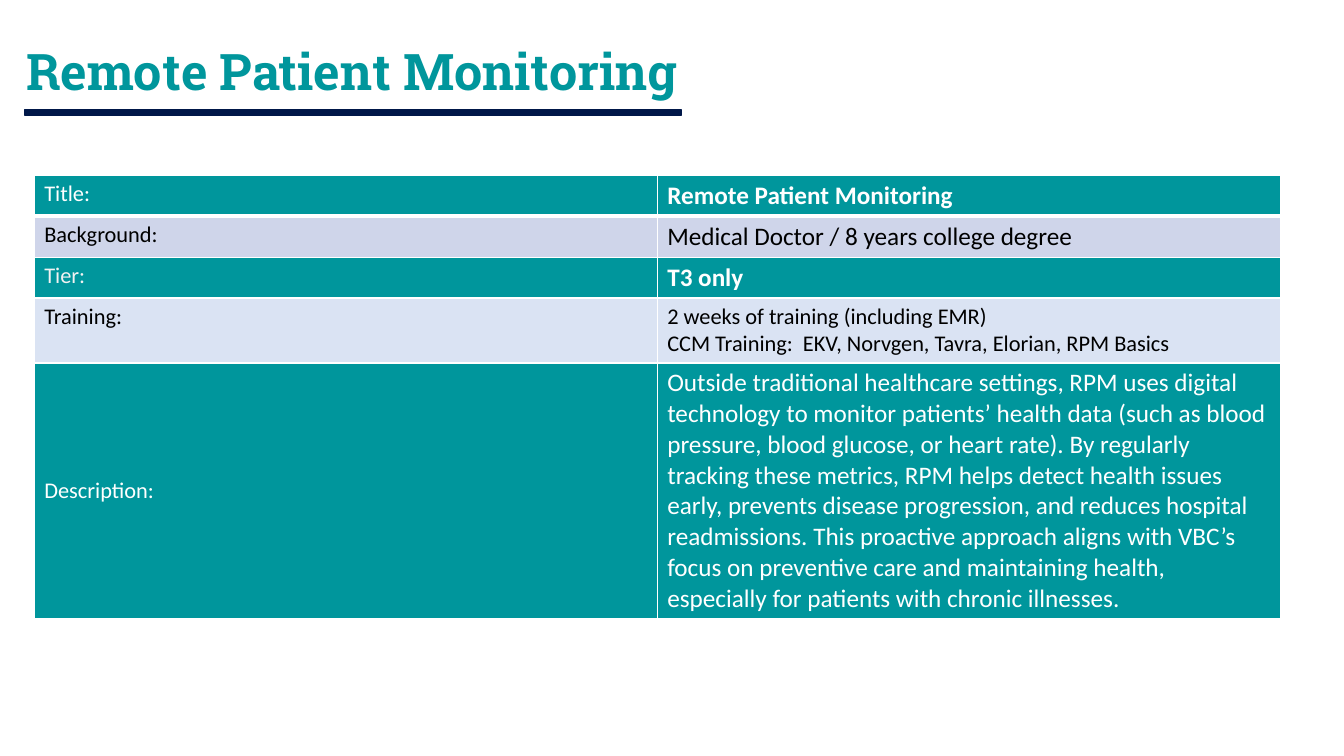
from lxml.etree import SubElement
from pptx import Presentation
from pptx.dml.color import RGBColor
from pptx.enum.shapes import MSO_SHAPE
from pptx.enum.text import MSO_ANCHOR, PP_ALIGN
from pptx.oxml import parse_xml
from pptx.oxml.ns import nsdecls, qn
from pptx.util import Pt

TEAL, NAVY, WHITE, BLACK = "00969C", "001749", "FFFFFF", "000000"
LAVENDER, PALE_BLUE, OFF_WHITE = "CFD5EA", "DAE3F3", "F2F2F2"

DESCRIPTION = (
    "Outside traditional healthcare settings, RPM uses digital technology to monitor "
    "patients’ health data (such as blood pressure, blood glucose, or heart rate). "
    "By regularly tracking these metrics, RPM helps detect health issues early, "
    "prevents disease progression, and reduces hospital readmissions. This proactive "
    "approach aligns with VBC’s focus on preventive care and maintaining health, "
    "especially for patients with chronic illnesses."
)
TRAINING = (
    "2 weeks of training (including EMR)\n"
    "CCM Training:  EKV, Norvgen, Tavra, Elorian, RPM Basics"
)

# height, fill, label, label colour, detail, detail colour, detail size, detail bold
SERVICE_ROWS = [
    (29.2, TEAL, "Title:", WHITE, "Remote Patient Monitoring", WHITE, 18, True),
    (29.2, LAVENDER, "Background:", BLACK,
     "Medical Doctor / 8 years college degree", BLACK, 18, False),
    (29.2, TEAL, "Tier:", OFF_WHITE, "T3 only", WHITE, 18, True),
    (46, PALE_BLUE, "Training:", BLACK, TRAINING, BLACK, 16, False),
    (183, TEAL, "Description:", WHITE, DESCRIPTION, WHITE, 18, False),
]


def color(hex_code):
    return RGBColor.from_string(hex_code)


class ServiceSlide:
    heading_font = "Roboto Slab"
    body_font = "Calibri"

    def __init__(self, deck):
        self.slide = deck.slides.add_slide(deck.slide_layouts[5])

    def format_text(self, frame, font, size, hex_code, bold):
        for paragraph in frame.paragraphs:
            paragraph.alignment = PP_ALIGN.LEFT
            for run in paragraph.runs:
                run.font.name = font
                run.font.size = Pt(size)
                run.font.bold = bold
                run.font.color.rgb = color(hex_code)

    def title(self, text, left, top, width, height):
        heading = self.slide.shapes.title
        heading.left, heading.top = Pt(left), Pt(top)
        heading.width, heading.height = Pt(width), Pt(height)
        frame = heading.text_frame
        frame.text = text
        frame.vertical_anchor = MSO_ANCHOR.MIDDLE
        frame.paragraphs[0].line_spacing = 0.9
        self.format_text(frame, self.heading_font, 36, TEAL, True)

    def bar(self, left, top, width, height, hex_code):
        underline = self.slide.shapes.add_shape(
            MSO_SHAPE.RECTANGLE, Pt(left), Pt(top), Pt(width), Pt(height))
        underline.shadow.inherit = False
        underline.fill.solid()
        underline.fill.fore_color.rgb = color(hex_code)
        underline.line.color.rgb = color(hex_code)
        underline.line.width = Pt(1)

    def borders(self, cell, top, bottom):
        """Draw white cell borders, with the given top and bottom widths."""
        properties = cell._tc.get_or_add_tcPr()
        widths = {"lnL": 1, "lnR": 1, "lnT": top, "lnB": bottom}
        for position, (side, width) in enumerate(widths.items()):
            edge = parse_xml(f'<a:{side} {nsdecls("a")} w="{Pt(width)}"/>')
            paint = SubElement(edge, qn("a:solidFill"))
            SubElement(paint, qn("a:srgbClr"), val=WHITE)
            properties.insert(position, edge)

    def cell(self, cell, text, fill, size, hex_code, bold):
        cell.text_frame.text = text
        cell.fill.solid()
        cell.fill.fore_color.rgb = color(fill)
        self.format_text(cell.text_frame, self.body_font, size, hex_code, bold)

    def table(self, rows, left, top, width):
        height = sum(row[0] for row in rows)
        table = self.slide.shapes.add_table(
            len(rows), 2, Pt(left), Pt(top), Pt(width), Pt(height)).table
        for column in table.columns:
            column.width = Pt(width / 2)
        for index, row in enumerate(rows):
            row_height, fill, label, label_color, detail, detail_color, size, bold = row
            table.rows[index].height = Pt(row_height)
            label_cell, detail_cell = table.cell(index, 0), table.cell(index, 1)
            self.cell(label_cell, label, fill, 16, label_color, False)
            self.cell(detail_cell, detail, fill, size, detail_color, bold)
            for cell in (label_cell, detail_cell):
                self.borders(cell, 3 if index == 1 else 1, 3 if index == 0 else 1)
        table.cell(len(rows) - 1, 0).vertical_anchor = MSO_ANCHOR.MIDDLE


def main():
    deck = Presentation()
    deck.slide_width, deck.slide_height = Pt(960), Pt(540)
    service = ServiceSlide(deck)
    service.title("Remote Patient Monitoring", 11.5, 0, 505.5, 106.5)
    service.bar(17.3, 78.5, 469.4, 3.6, NAVY)
    service.table(SERVICE_ROWS, 24.5, 125.3, 890)
    deck.save("out.pptx")


if __name__ == "__main__":
    main()
